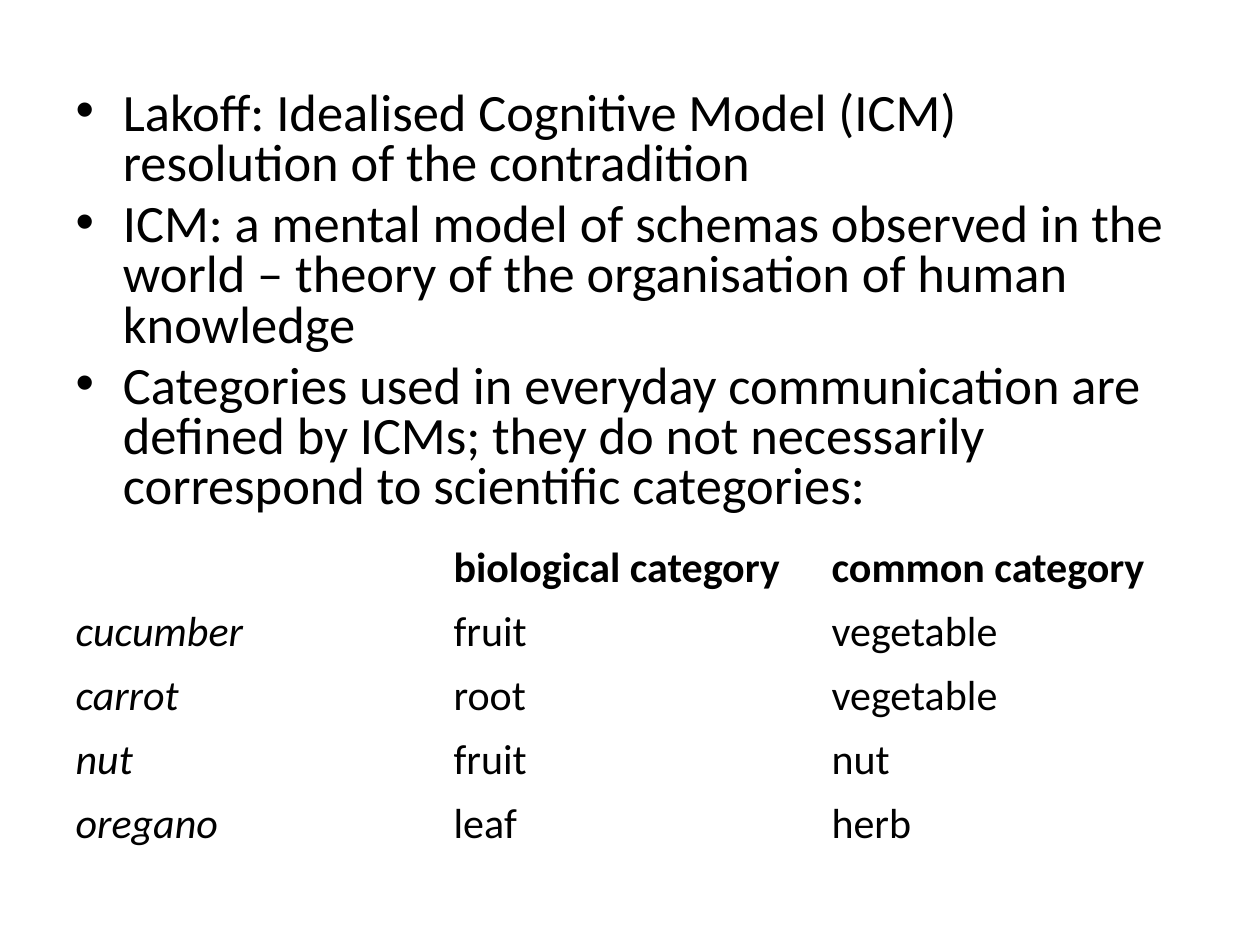
from pptx import Presentation
from pptx.dml.color import RGBColor
from pptx.enum.text import MSO_AUTO_SIZE
from pptx.util import Pt

COLORS = {"text": "000000"}
LEFT, WIDTH = 36, 648
BODY_TOP, BODY_HEIGHT = 48.24, 258.48
TABLE_TOP, ROW_HEIGHT = 306.72, 36

POINTS = [
    "Lakoff: Idealised Cognitive Model (ICM) resolution of the contradition",
    "ICM: a mental model of schemas observed in the world – theory of the "
    "organisation of human knowledge",
    "Categories used in everyday communication are defined by ICMs; they do not "
    "necessarily correspond to scientific categories:",
]
CATEGORIES = [
    ["", "biological category", "common category"],
    ["cucumber", "fruit", "vegetable"],
    ["carrot", "root", "vegetable"],
    ["nut", "fruit", "nut"],
    ["oregano", "leaf", "herb"],
]


class SlideBuilder:
    font_name = "Calibri"
    body_size = 30
    table_size = 24

    def __init__(self, page):
        self.page = page

    def style(self, paragraph, size, bold=False, italic=False):
        font = paragraph.font
        font.name = self.font_name
        font.size = Pt(size)
        font.bold = bold
        font.italic = italic
        font.color.rgb = RGBColor.from_string(COLORS["text"])

    def bullets(self, box, texts, left, top, width, height):
        box.left, box.top = Pt(left), Pt(top)
        box.width, box.height = Pt(width), Pt(height)
        frame = box.text_frame
        frame.text = "\n".join(texts)
        frame.word_wrap = True
        frame.auto_size = MSO_AUTO_SIZE.NONE
        for paragraph in frame.paragraphs:
            paragraph.line_spacing = 0.8
            paragraph.space_before = Pt(0.2 * self.body_size)
            self.style(paragraph, self.body_size)

    def table(self, rows, left, top, width, row_height):
        table = self.page.shapes.add_table(
            len(rows), len(rows[0]), Pt(left), Pt(top),
            Pt(width), Pt(row_height * len(rows)),
        ).table
        table.first_row = True
        table.horz_banding = False
        for row_index, row in enumerate(rows):
            for column_index, text in enumerate(row):
                cell = table.cell(row_index, column_index)
                cell.fill.background()
                cell.text = text
                self.style(
                    cell.text_frame.paragraphs[0], self.table_size,
                    bold=row_index == 0,
                    italic=row_index > 0 and column_index == 0,
                )


def main():
    deck = Presentation()
    deck.slide_width, deck.slide_height = Pt(720), Pt(540)
    page = deck.slides.add_slide(deck.slide_layouts.get_by_name("Title and Content"))
    title = page.shapes.title
    title.element.getparent().remove(title.element)

    builder = SlideBuilder(page)
    builder.bullets(page.placeholders[1], POINTS, LEFT, BODY_TOP, WIDTH, BODY_HEIGHT)
    builder.table(CATEGORIES, LEFT, TABLE_TOP, WIDTH, ROW_HEIGHT)
    deck.save("out.pptx")


if __name__ == "__main__":
    main()
